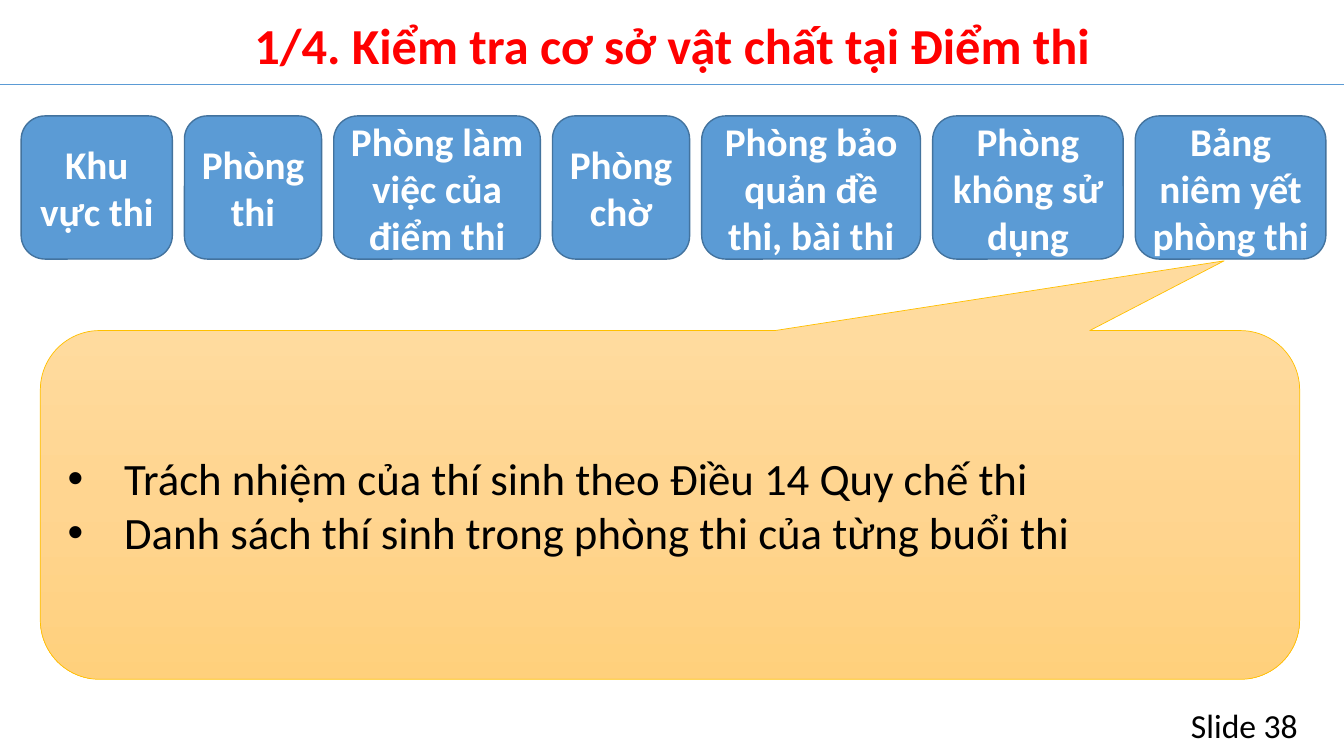
from copy import deepcopy
from dataclasses import dataclass

from lxml import etree
from pptx import Presentation
from pptx.dml.color import RGBColor
from pptx.enum.shapes import MSO_CONNECTOR, MSO_SHAPE
from pptx.enum.text import MSO_ANCHOR, MSO_AUTO_SIZE, PP_ALIGN
from pptx.oxml.ns import qn
from pptx.util import Inches, Pt

ROUNDED = MSO_SHAPE.ROUNDED_RECTANGLE
CALLOUT = MSO_SHAPE.ROUNDED_RECTANGULAR_CALLOUT
STRAIGHT = MSO_CONNECTOR.STRAIGHT
MIDDLE = MSO_ANCHOR.MIDDLE
NO_AUTOFIT = MSO_AUTO_SIZE.NONE
LEFT, CENTER, RIGHT = PP_ALIGN.LEFT, PP_ALIGN.CENTER, PP_ALIGN.RIGHT


@dataclass(frozen=True)
class Theme:
    font: str = "Calibri"
    title_color: str = "FF0000"
    text_color: str = "000000"
    room_text: str = "FFFFFF"
    room_fill: str = "5B9BD5"
    room_line: str = "43739E"
    callout_line: str = "FFC000"
    callout_stops: tuple[str, ...] = ("FFDB9E", "FFD590", "FFD07C")
    title_size: int = 36
    room_size: int = 28
    list_size: int = 32
    number_size: int = 24


@dataclass(frozen=True)
class Room:
    label: str
    width: float


THEME = Theme()
ROOMS = (
    Room("Khu vực thi", 1.5),
    Room("Phòng thi", 1.36),
    Room("Phòng làm việc của điểm thi", 2.05),
    Room("Phòng chờ", 1.36),
    Room("Phòng bảo quản đề thi, bài thi", 2.17),
    Room("Phòng không sử dụng", 1.89),
    Room("Bảng niêm yết phòng thi", 1.89),
)
ROOM_LEFT, ROOM_TOP, ROOM_HEIGHT, ROOM_GAP = 0.21, 1.15, 1.42, 0.12
DUTIES = (
    "Trách nhiệm của thí sinh theo Điều 14 Quy chế thi",
    "Danh sách thí sinh trong phòng thi của từng buổi thi",
)


def box(left: float, top: float, width: float, height: float) -> tuple:
    return Inches(left), Inches(top), Inches(width), Inches(height)


def add_text(paragraph, text: str, size: int, color: str,
             align=LEFT, bold: bool = False) -> None:
    paragraph.alignment = align
    run = paragraph.add_run()
    run.text = text
    run.font.name = THEME.font
    run.font.size = Pt(size)
    run.font.bold = bold
    run.font.color.rgb = RGBColor.from_string(color)


def add_bullet(paragraph, indent: float) -> None:
    properties = paragraph._p.get_or_add_pPr()
    properties.set("marL", str(Inches(indent)))
    properties.set("indent", str(-Inches(indent)))
    font = etree.SubElement(properties, qn("a:buFont"))
    font.set("typeface", "Arial")
    etree.SubElement(properties, qn("a:buChar")).set("char", "•")


def add_panel(slide, kind, area: tuple, line_color: str, line_width: float):
    shape = slide.shapes.add_shape(kind, *area)
    shape.shadow.inherit = False
    shape.line.color.rgb = RGBColor.from_string(line_color)
    shape.line.width = Pt(line_width)
    shape.text_frame.word_wrap = True
    shape.text_frame.vertical_anchor = MIDDLE
    return shape


def add_header(slide) -> None:
    title = slide.shapes.title
    title.left, title.top, title.width, title.height = box(0.37, 0.19, 12.6, 0.57)
    frame = title.text_frame
    frame.auto_size = NO_AUTOFIT
    frame.vertical_anchor = MIDDLE
    paragraph = frame.paragraphs[0]
    paragraph.line_spacing = 0.9
    add_text(paragraph, "1/4. Kiểm tra cơ sở vật chất tại Điểm thi",
             THEME.title_size, THEME.title_color, CENTER, True)

    rule = slide.shapes.add_connector(
        STRAIGHT, 0, Inches(0.84), Inches(13.33), Inches(0.84))
    rule.line.color.rgb = RGBColor.from_string(THEME.room_fill)
    rule.line.width = Pt(0.5)
    etree.SubElement(rule._element.spPr, qn("a:effectLst"))


def add_rooms(slide) -> None:
    left = ROOM_LEFT
    for room in ROOMS:
        shape = add_panel(slide, ROUNDED,
                          box(left, ROOM_TOP, room.width, ROOM_HEIGHT),
                          THEME.room_line, 1)
        shape.fill.solid()
        shape.fill.fore_color.rgb = RGBColor.from_string(THEME.room_fill)
        add_text(shape.text_frame.paragraphs[0], room.label,
                 THEME.room_size, THEME.room_text, CENTER, True)
        left += room.width + ROOM_GAP


def fill_gradient(shape, colors: tuple[str, ...]) -> None:
    fill = shape.fill
    fill.gradient()
    fill.gradient_angle = 270
    # The default gradient has two stops; a third goes between them
    stop_list = shape._element.spPr.find(".//" + qn("a:gsLst"))
    stop_list.insert(1, deepcopy(stop_list[0]))
    for index, (stop, color) in enumerate(zip(fill.gradient_stops, colors)):
        stop.position = index / (len(colors) - 1)
        stop.color.rgb = RGBColor.from_string(color)


def add_duties(slide) -> None:
    callout = add_panel(slide, CALLOUT, box(0.4, 3.28, 12.49, 3.46),
                        THEME.callout_line, 0.5)
    for index, value in enumerate((0.44, -0.7, 0.17)):
        callout.adjustments[index] = value
    fill_gradient(callout, THEME.callout_stops)
    frame = callout.text_frame
    for index, duty in enumerate(DUTIES):
        paragraph = frame.add_paragraph() if index else frame.paragraphs[0]
        add_text(paragraph, duty, THEME.list_size, THEME.text_color)
        add_bullet(paragraph, 0.56)


def add_slide_number(slide) -> None:
    number = slide.shapes.add_textbox(*box(10.29, 6.94, 2.68, 0.5))
    number.text_frame.word_wrap = True
    add_text(number.text_frame.paragraphs[0], "Slide 38",
             THEME.number_size, THEME.text_color, RIGHT)


def main() -> None:
    presentation = Presentation()
    presentation.slide_width = Inches(13.33)
    presentation.slide_height = Inches(7.5)
    title_only = presentation.slide_layouts[5]
    slide = presentation.slides.add_slide(title_only)
    add_header(slide)
    add_rooms(slide)
    add_duties(slide)
    add_slide_number(slide)
    presentation.save("out.pptx")


if __name__ == "__main__":
    main()
